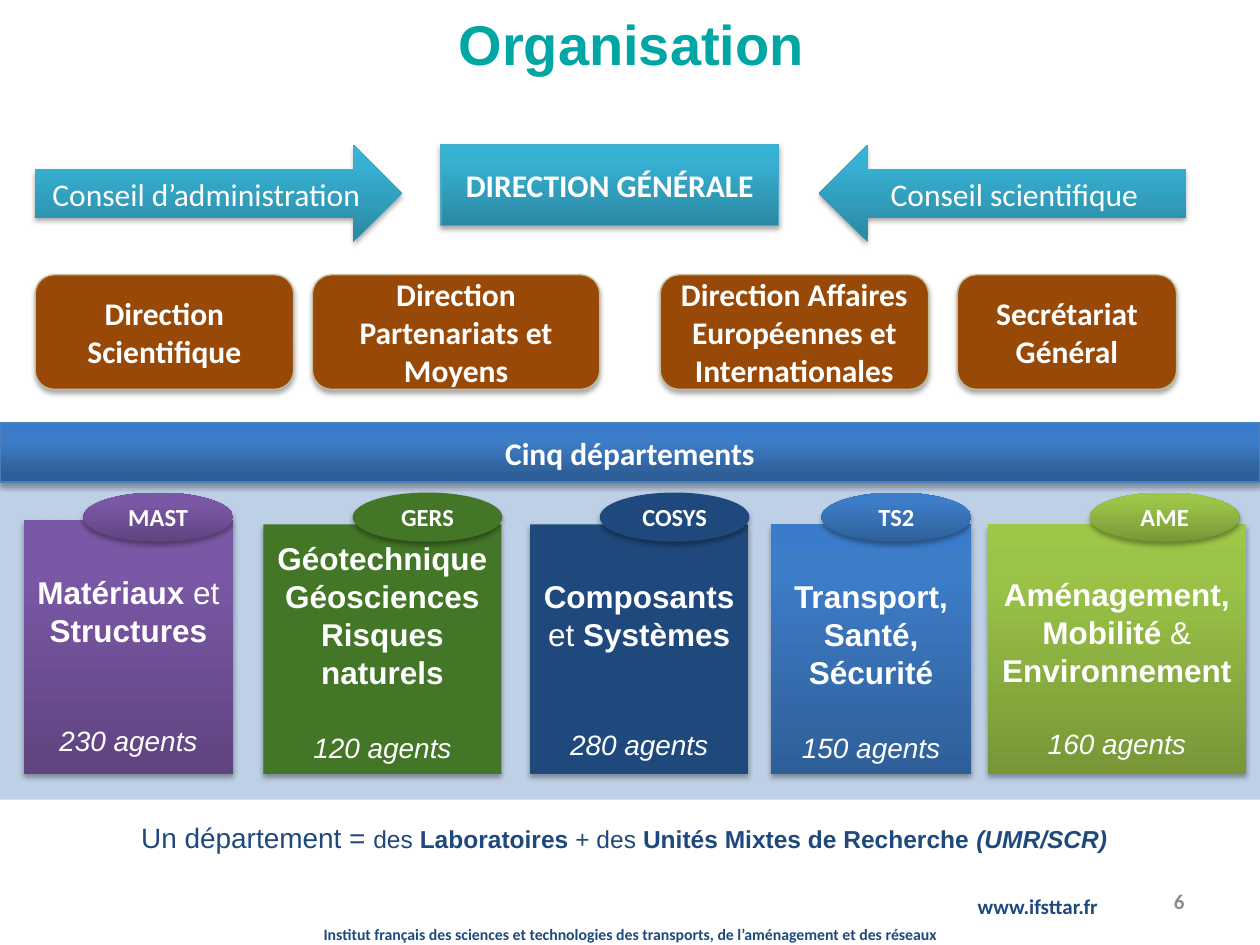
import lxml.etree
import pptx
import pptx.dml.color
import pptx.enum.shapes
import pptx.enum.text
import pptx.oxml.ns
import pptx.util

Cm = pptx.util.Cm
Pt = pptx.util.Pt
RGBColor = pptx.dml.color.RGBColor
SHAPE = pptx.enum.shapes.MSO_SHAPE
ALIGN = pptx.enum.text.PP_ALIGN
ANCHOR = pptx.enum.text.MSO_ANCHOR
qn = pptx.oxml.ns.qn

WHITE = RGBColor(0xFF, 0xFF, 0xFF)
NAVY = RGBColor(0x1F, 0x49, 0x7D)
GREEN = RGBColor(0x43, 0x76, 0x26)
BROWN = RGBColor(0x98, 0x48, 0x07)
SAND = RGBColor(0xC4, 0xBD, 0x97)
TITLE_TEAL = RGBColor(0x00, 0xA6, 0xA4)
GREY = RGBColor(0x8C, 0x8C, 0x8C)
PANE_BLUE = RGBColor(0x4F, 0x81, 0xBD)
BAND_EDGE = RGBColor(0x4B, 0x7E, 0xBC)
TEAL_EDGE = RGBColor(0x46, 0xAA, 0xC5)
# Gradients run from the bottom edge to the top edge
PURPLE = [RGBColor(0x5F, 0x44, 0x80), RGBColor(0x7B, 0x58, 0xA6), RGBColor(0x7C, 0x57, 0xA8)]
BLUE = [RGBColor(0x2F, 0x5F, 0x99), RGBColor(0x3D, 0x7C, 0xC7), RGBColor(0x3A, 0x7C, 0xCB)]
LIME = [RGBColor(0x77, 0x97, 0x37), RGBColor(0x9B, 0xC3, 0x48), RGBColor(0x9D, 0xC7, 0x46)]
TEAL = [RGBColor(0x2A, 0x88, 0xA2), RGBColor(0x37, 0xB1, 0xD2), RGBColor(0x34, 0xB4, 0xD6)]

deck = pptx.Presentation()
deck.slide_width, deck.slide_height = Cm(25.4), Cm(19.05)
page = deck.slides.add_slide(deck.slide_layouts[6])


def add_shape(kind, left, top, width, height, fill, edge=None, stops=(0, 80, 100), shadow=True):
    """Add a preset shape; fill is None, one colour, or a list of gradient colours."""
    shape = page.shapes.add_shape(kind, Cm(left), Cm(top), Cm(width), Cm(height))
    properties = shape._element.spPr
    if fill is None:
        shape.fill.background()
    elif isinstance(fill, list):
        shape.fill.gradient()
        shape.fill.gradient_angle = 90
        stop_list = properties.find(".//" + qn("a:gsLst"))
        stop_list.clear()
        for position, colour in zip(stops, fill):
            stop = lxml.etree.SubElement(stop_list, qn("a:gs"), pos=str(position * 1000))
            lxml.etree.SubElement(stop, qn("a:srgbClr"), val=str(colour))
    else:
        shape.fill.solid()
        shape.fill.fore_color.rgb = fill
    if edge is None:
        shape.line.fill.background()
    else:
        shape.line.color.rgb = edge
        shape.line.width = Pt(0.75)
    shape.shadow.inherit = False
    if shadow:
        outer = lxml.etree.SubElement(
            properties.find(qn("a:effectLst")), qn("a:outerShdw"),
            blurRad=str(Pt(3.1)), dist=str(Pt(1.8)), dir="5400000", rotWithShape="0")
        black = lxml.etree.SubElement(outer, qn("a:srgbClr"), val="000000")
        lxml.etree.SubElement(black, qn("a:alpha"), val="35000")
    return shape


def write(para, runs, size, font="Calibri", colour=WHITE, align=ALIGN.CENTER):
    """Fill a paragraph; each run is its text and a style holding b and/or i."""
    para.alignment = align
    for text, style in runs:
        span = para.add_run()
        span.text = text
        span.font.name = font
        span.font.size = Pt(size)
        span.font.color.rgb = colour
        span.font.bold = "b" in style
        span.font.italic = "i" in style


# Governance
for kind, left, label in [
    (SHAPE.LEFT_ARROW, 16.51, "Conseil scientifique"),
    (SHAPE.RIGHT_ARROW, 0.71, "Conseil d’administration"),
]:
    arrow = add_shape(kind, left, 2.92, 7.39, 1.96, TEAL)
    write(arrow.text_frame.paragraphs[0], [(label, "")], 18)

head_office = add_shape(SHAPE.RECTANGLE, 8.89, 2.92, 6.81, 1.63, TEAL, TEAL_EDGE)
write(head_office.text_frame.paragraphs[0], [("DIRECTION GÉNÉRALE", "b")], 18)

for left, width, label in [
    (0.71, 5.21, "Direction Scientifique"),
    (6.3, 5.79, "Direction Partenariats et Moyens"),
    (13.31, 5.41, "Direction Affaires Européennes et Internationales"),
    (19.3, 4.42, "Secrétariat Général"),
]:
    direction = add_shape(SHAPE.ROUNDED_RECTANGLE, left, 5.54, width, 2.31, BROWN, SAND)
    write(direction.text_frame.paragraphs[0], [(label, "b")], 18)

# Departments
pane = add_shape(SHAPE.RECTANGLE, 0, 8.53, 25.4, 7.59, PANE_BLUE, shadow=False)
pane_colour = pane._element.spPr.find(qn("a:solidFill"))[0]
lxml.etree.SubElement(pane_colour, qn("a:alpha"), val="37000")

band = add_shape(SHAPE.RECTANGLE, 0, 8.53, 25.4, 1.19, BLUE, BAND_EDGE, stops=(15, 68, 93))
write(band.text_frame.paragraphs[0], [("Cinq départements", "b")], 18)

CARD_BOTTOM = 15.6
# code, fill, card left, top, width, oval left, inset above the name, gap in points, name, staff
departments = [
    ("MAST", PURPLE, 0.48, 10.49, 4.22, 1.68, 1.06, 40,
     [("Matériaux ", "b"), ("et ", ""), ("Structures", "b")], "230 agents"),
    ("GERS", GREEN, 5.31, 10.57, 4.8, 7.11, 0.29, 20,
     [("Géotechnique Géosciences Risques naturels", "b")], "120 agents"),
    ("COSYS", NAVY, 10.69, 10.57, 4.39, 12.09, 1.06, 40,
     [("Composants ", "b"), ("et ", ""), ("Systèmes", "b")], "280 agents"),
    ("TS2", BLUE, 15.54, 10.57, 4.04, 16.56, 1.06, 20,
     [("Transport, Santé, Sécurité", "b")], "150 agents"),
    ("AME", LIME, 19.91, 10.57, 5.21, 21.97, 1.02, 19,
     [("Aménagement, Mobilité ", "b"), ("& ", ""), ("Environnement", "b")], "160 agents"),
]
for code, fill, left, top, width, oval_left, inset, gap, name, staff in departments:
    card = add_shape(SHAPE.RECTANGLE, left, top, width, CARD_BOTTOM - top, fill)
    frame = card.text_frame
    frame.vertical_anchor = ANCHOR.TOP
    frame.margin_top = Cm(inset)
    frame.margin_left = frame.margin_right = Cm(0.2)
    name_para, staff_para = frame.paragraphs[0], frame.add_paragraph()
    write(name_para, name, 18, "Arial")
    write(staff_para, [(staff, "i")], 16, "Arial")
    name_para.line_spacing = staff_para.line_spacing = Pt(21.7)
    staff_para.space_before = Pt(gap)

    oval = add_shape(SHAPE.OVAL, oval_left, 9.93, 3.02, 0.99, fill)
    write(oval.text_frame.paragraphs[0], [(code, "b")], 14)

definition = add_shape(SHAPE.ROUNDED_RECTANGLE, 0.89, 16.33, 23.39, 1.12, None, shadow=False)
para = definition.text_frame.paragraphs[0]
write(para, [("Un département = ", "")], 16, "Arial", NAVY)
write(para, [("des ", ""), ("Laboratoires", "b"), (" + des ", ""),
             ("Unités Mixtes de Recherche ", "b"), ("(UMR/SCR)", "bi")], 14, "Arial", NAVY)

# Title and footer
for left, top, width, height, anchor, align, text, size, font, colour in [
    (1.3, 0, 22.86, 1.73, ANCHOR.MIDDLE, ALIGN.CENTER, "Organisation", 32, "Arial", TITLE_TEAL),
    (0, 18.52, 25.4, 0.64, ANCHOR.TOP, ALIGN.CENTER,
     "Institut français des sciences et technologies des transports, "
     "de l’aménagement et des réseaux", 9, "Calibri", NAVY),
    (19.46, 17.88, 3, 0.76, ANCHOR.TOP, ALIGN.LEFT, "www.ifsttar.fr", 12, "Calibri", NAVY),
    (22.91, 17.65, 1.22, 1.02, ANCHOR.MIDDLE, ALIGN.RIGHT, "6", 12, "Calibri", GREY),
]:
    box = page.shapes.add_textbox(Cm(left), Cm(top), Cm(width), Cm(height))
    box.text_frame.word_wrap = True
    box.text_frame.vertical_anchor = anchor
    write(box.text_frame.paragraphs[0], [(text, "b")], size, font, colour, align)

deck.save("out.pptx")
